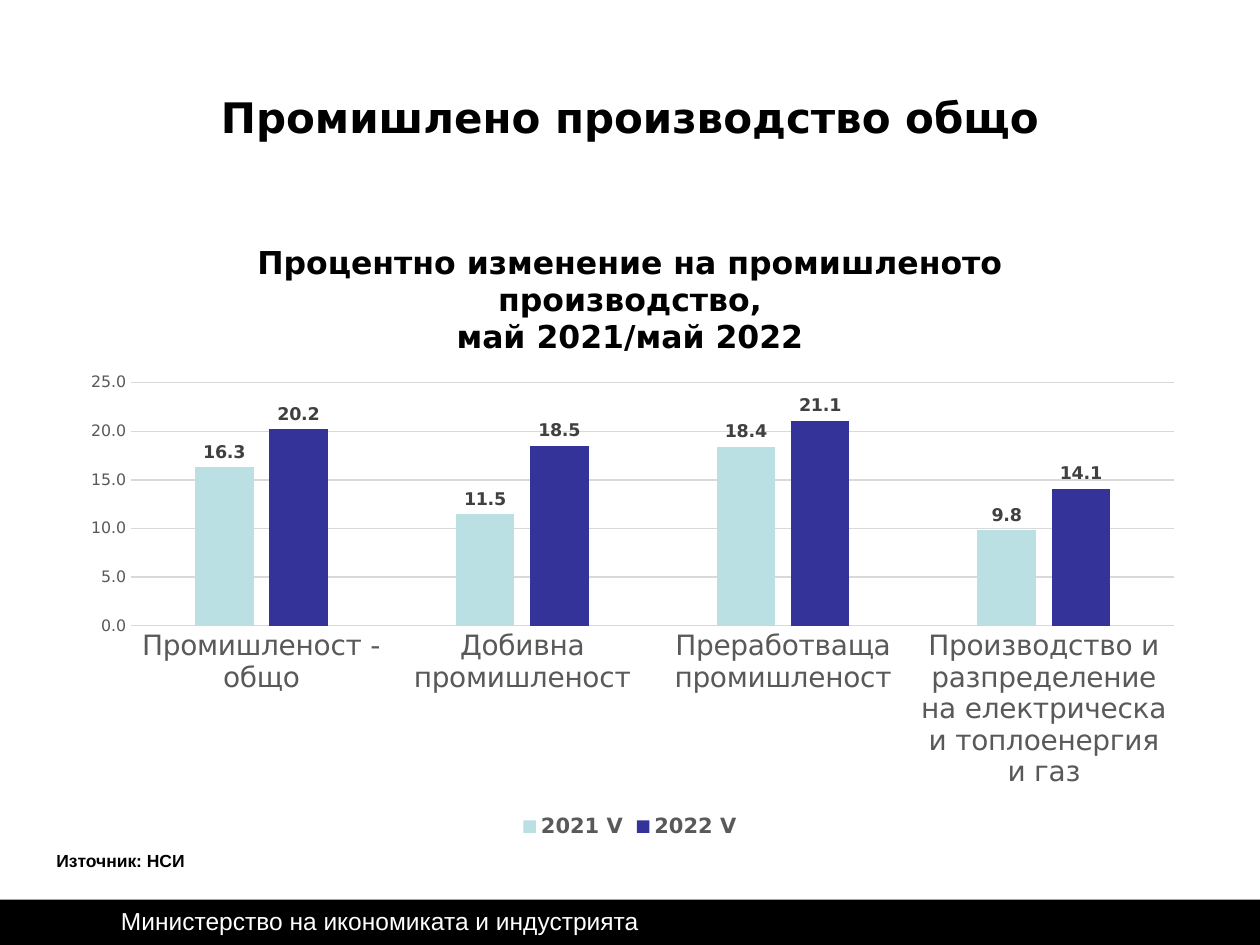
import pptx
import pptx.chart.data
import pptx.dml.color
import pptx.enum.chart
import pptx.enum.shapes
import pptx.enum.text
import pptx.oxml
import pptx.oxml.ns
import pptx.util
from pptx.util import Inches

RGBColor = pptx.dml.color.RGBColor
BLACK = RGBColor(0x00, 0x00, 0x00)
WHITE = RGBColor(0xFF, 0xFF, 0xFF)
GRID_GREY = RGBColor(0xD9, 0xD9, 0xD9)
AXIS_GREY = RGBColor(0x59, 0x59, 0x59)
LABEL_GREY = RGBColor(0x40, 0x40, 0x40)
PALE_TEAL = RGBColor(0xBB, 0xE0, 0xE3)
INDIGO = RGBColor(0x33, 0x33, 0x99)

HEADING_FONT = "DejaVu Sans"
BODY_FONT = "Arial"

CATEGORIES = [
    "Промишленост - общо",
    "Добивна промишленост",
    "Преработваща промишленост",
    "Производство и разпределение на електрическа и топлоенергия и газ",
]
SERIES = [
    ("2021 V", [16.3, 11.5, 18.4, 9.8], PALE_TEAL),
    ("2022 V", [20.2, 18.5, 21.1, 14.1], INDIGO),
]
CHART_TITLE = ["Процентно изменение на промишленото производство,", "май 2021/май 2022"]


def style_font(font, size, color, name=HEADING_FONT, bold=False):
    font.name = name
    font.size = pptx.util.Pt(size)
    font.bold = bold
    font.color.rgb = color


def add_run(paragraph, text, size, color, name=HEADING_FONT, bold=False):
    run = paragraph.add_run()
    run.text = text
    style_font(run.font, size, color, name, bold)


def style_line(line):
    line.color.rgb = GRID_GREY
    line.width = pptx.util.Pt(0.75)


def set_title(slide, text):
    title = slide.shapes.title
    title.left, title.top = Inches(0.5), Inches(0.3)
    title.width, title.height = Inches(9), Inches(1.25)
    title.text_frame.vertical_anchor = pptx.enum.text.MSO_ANCHOR.MIDDLE
    paragraph = title.text_frame.paragraphs[0]
    paragraph.alignment = pptx.enum.text.PP_ALIGN.CENTER
    add_run(paragraph, text, 24, BLACK, bold=True)


def add_footer(slide, text):
    bar = slide.shapes.add_shape(
        pptx.enum.shapes.MSO_SHAPE.RECTANGLE,
        Inches(0), Inches(7.14), Inches(10), Inches(0.38))
    bar.shadow.inherit = False
    bar.fill.solid()
    bar.fill.fore_color.rgb = BLACK
    bar.line.fill.background()
    frame = bar.text_frame
    frame.margin_left = Inches(0.96)
    frame.vertical_anchor = pptx.enum.text.MSO_ANCHOR.TOP
    paragraph = frame.paragraphs[0]
    paragraph.alignment = pptx.enum.text.PP_ALIGN.LEFT
    add_run(paragraph, text, 14, WHITE, BODY_FONT)


def add_source_note(slide, text):
    box = slide.shapes.add_textbox(Inches(0.35), Inches(6.7), Inches(1.24), Inches(0.27))
    box.text_frame.word_wrap = False
    box.text_frame.auto_size = pptx.enum.text.MSO_AUTO_SIZE.SHAPE_TO_FIT_TEXT
    add_run(box.text_frame.paragraphs[0], text, 10, BLACK, BODY_FONT, bold=True)


def set_chart_title(chart, lines):
    frame = chart.chart_title.text_frame
    for index, line in enumerate(lines):
        paragraph = frame.add_paragraph() if index else frame.paragraphs[0]
        add_run(paragraph, line, 18, BLACK, bold=True)
    chart.chart_title.include_in_layout = False


def style_axes(chart):
    category_axis, value_axis = chart.category_axis, chart.value_axis
    for axis, size in ((category_axis, 16), (value_axis, 9)):
        axis.major_tick_mark = pptx.enum.chart.XL_TICK_MARK.NONE
        axis.minor_tick_mark = pptx.enum.chart.XL_TICK_MARK.NONE
        style_font(axis.tick_labels.font, size, AXIS_GREY)
    style_line(category_axis.format.line)
    value_axis.format.line.fill.background()
    value_axis.minimum_scale, value_axis.maximum_scale = 0, 25
    value_axis.major_unit = 5
    value_axis.tick_labels.number_format = "0.0"
    value_axis.tick_labels.number_format_is_linked = False
    style_line(value_axis.major_gridlines.format.line)


def style_series(series, color):
    series.format.fill.solid()
    series.format.fill.fore_color.rgb = color
    series.invert_if_negative = False
    labels = series.data_labels
    labels.show_value = True
    labels.position = pptx.enum.chart.XL_LABEL_POSITION.OUTSIDE_END
    labels.number_format = "0.0"
    labels.number_format_is_linked = False
    style_font(labels.font, 10, LABEL_GREY, bold=True)


def place_plot(chart, x, y, width, height):
    """Fix the inner plot area, in fractions of the chart frame."""
    plot_area = chart._chartSpace.chart.plotArea
    for layout in plot_area.findall(pptx.oxml.ns.qn("c:layout")):
        plot_area.remove(layout)
    values = zip("xywh", (x, y, width, height))
    sizes = "".join(f'<c:{key} val="{value}"/>' for key, value in values)
    plot_area.insert(0, pptx.oxml.parse_xml(
        f'<c:layout {pptx.oxml.ns.nsdecls("c")}><c:manualLayout>'
        '<c:layoutTarget val="inner"/><c:xMode val="edge"/><c:yMode val="edge"/>'
        f'{sizes}</c:manualLayout></c:layout>'))


def add_production_chart(slide):
    data = pptx.chart.data.CategoryChartData(number_format="0.0")
    data.categories = CATEGORIES
    for name, values, _ in SERIES:
        data.add_series(name, values)
    chart = slide.shapes.add_chart(
        pptx.enum.chart.XL_CHART_TYPE.COLUMN_CLUSTERED,
        Inches(0.5), Inches(1.75), Inches(9), Inches(4.95), data).chart
    style_font(chart.font, 10, BLACK)
    set_chart_title(chart, CHART_TITLE)
    style_axes(chart)

    plot = chart.plots[0]
    plot.vary_by_categories = False
    plot.gap_width, plot.overlap = 219, -27
    for series, (_, _, color) in zip(plot.series, SERIES):
        style_series(series, color)
    place_plot(chart, x=0.06, y=0.26, width=0.92, height=0.39)

    chart.has_legend = True
    chart.legend.position = pptx.enum.chart.XL_LEGEND_POSITION.BOTTOM
    chart.legend.include_in_layout = False
    style_font(chart.legend.font, 12, AXIS_GREY, bold=True)


def main():
    presentation = pptx.Presentation()
    presentation.slide_width, presentation.slide_height = Inches(10), Inches(7.5)
    # Title-only layout
    slide = presentation.slides.add_slide(presentation.slide_layouts[5])
    set_title(slide, "Промишлено производство общо")
    add_footer(slide, "Министерство на икономиката и индустрията")
    add_production_chart(slide)
    add_source_note(slide, "Източник: НСИ")
    presentation.save("out.pptx")


if __name__ == "__main__":
    main()
